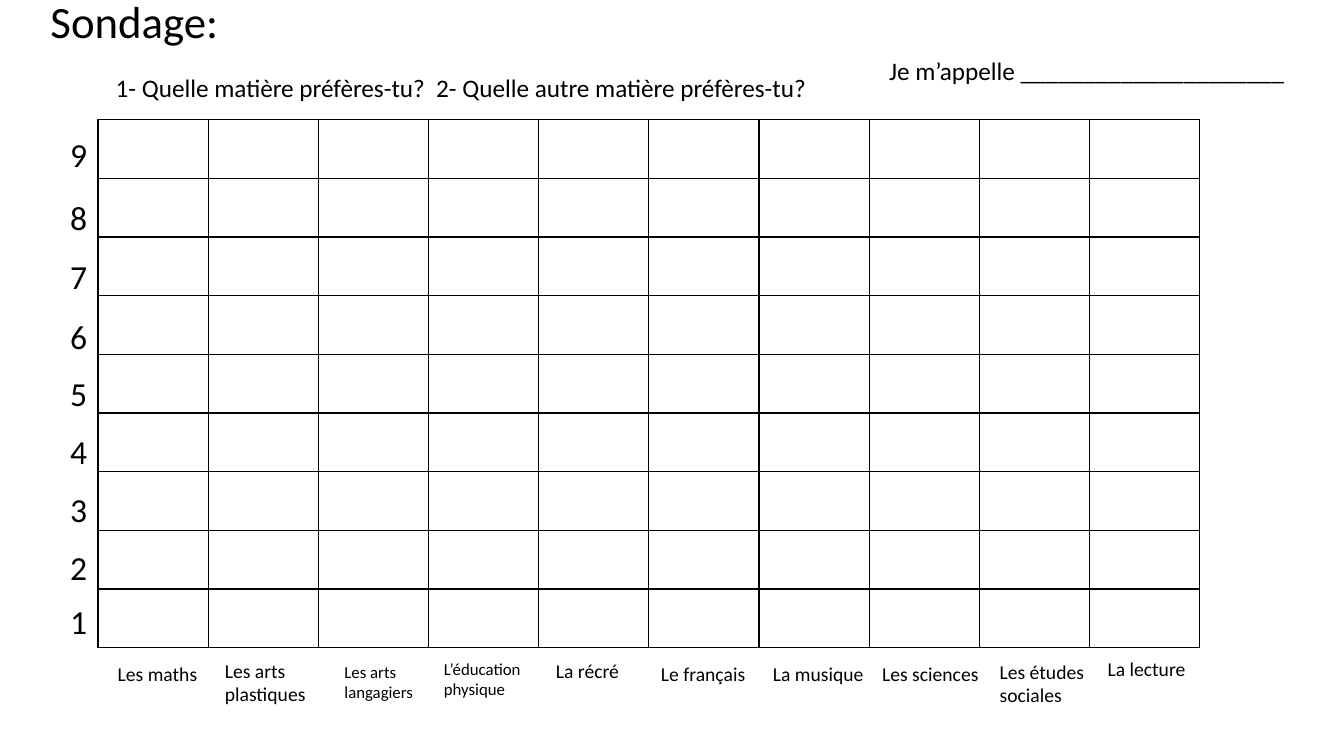
"""Build a class survey slide with a blank tally grid."""
from pptx import Presentation
from pptx.dml.color import RGBColor
from pptx.enum.text import MSO_AUTO_SIZE
from pptx.oxml import parse_xml
from pptx.oxml.ns import nsdecls
from pptx.util import Pt

BLACK = RGBColor(0, 0, 0)
FONT = "Calibri"
ROWS, COLS = 9, 10
CELL_W, CELL_H = 78.7, 41.9
TOPS = [92, 137, 179, 222, 263, 304, 346, 387, 426]
TOPICS = [
    ("Les maths", 77, 469, 72, 14, False),
    ("Les arts\nplastiques", 153.5, 467, 73, 14, False),
    ("Les arts langagiers", 239, 469, 81, 12, True),
    ("L’éducation physique", 310, 467, 88, 12, True),
    ("La récré", 390, 467, 60, 14, False),
    ("Le français", 465, 469, 76, 14, False),
    ("La musique", 545, 469, 80, 14, False),
    ("Les sciences", 623, 469, 84, 14, False),
    ("Les études sociales", 707, 467.5, 77, 14, True),
    ("La lecture", 784, 466, 71, 14, False),
]


def add_text(slide, text, left, top, width, size, wrap=False):
    """Add a text box whose height follows its lines."""
    lines = text.count("\n") + 1
    box = slide.shapes.add_textbox(
        Pt(left), Pt(top), Pt(width), Pt(size * 1.2 * lines + 7.2))
    frame = box.text_frame
    frame.word_wrap = wrap
    frame.auto_size = MSO_AUTO_SIZE.SHAPE_TO_FIT_TEXT
    frame.text = text
    for para in frame.paragraphs:
        para.font.size = Pt(size)
        para.font.name = FONT
        para.font.color.rgb = BLACK


def draw_edges(cell):
    """Give a clear cell a thin line on each side."""
    props = cell._tc.get_or_add_tcPr()
    for side in ("lnL", "lnR", "lnT", "lnB"):
        props.append(parse_xml(
            f'<a:{side} {nsdecls("a")} w="{Pt(1)}"><a:solidFill>'
            f'<a:srgbClr val="{BLACK}"/></a:solidFill></a:{side}>'))
    cell.fill.background()


def add_grid(slide):
    """Add the empty tally table."""
    table = slide.shapes.add_table(
        ROWS, COLS, Pt(70), Pt(85.5),
        Pt(CELL_W * COLS), Pt(CELL_H * ROWS)).table
    table.first_row = False
    table.horz_banding = False
    for col in table.columns:
        col.width = Pt(CELL_W)
    for row in table.rows:
        row.height = Pt(CELL_H)
    for cell in table.iter_cells():
        draw_edges(cell)


def main():
    """Build and save the slide."""
    deck = Presentation()
    deck.slide_width, deck.slide_height = Pt(960), Pt(540)
    slide = deck.slides.add_slide(deck.slide_layouts[6])
    add_text(slide, "Sondage:", 29, -8, 297, 32, True)
    add_text(slide, "Je m’appelle _____________________", 628, 36, 301, 18)
    add_text(
        slide,
        "1- Quelle matière préfères-tu?  2- Quelle autre matière préfères-tu?",
        75.6, 48, 512, 18, True)
    add_grid(slide)
    for step, top in enumerate(TOPS):
        add_text(slide, str(ROWS - step), 43, top, 26.6, 24)
    for topic in TOPICS:
        add_text(slide, *topic)
    deck.save("out.pptx")


if __name__ == "__main__":
    main()
